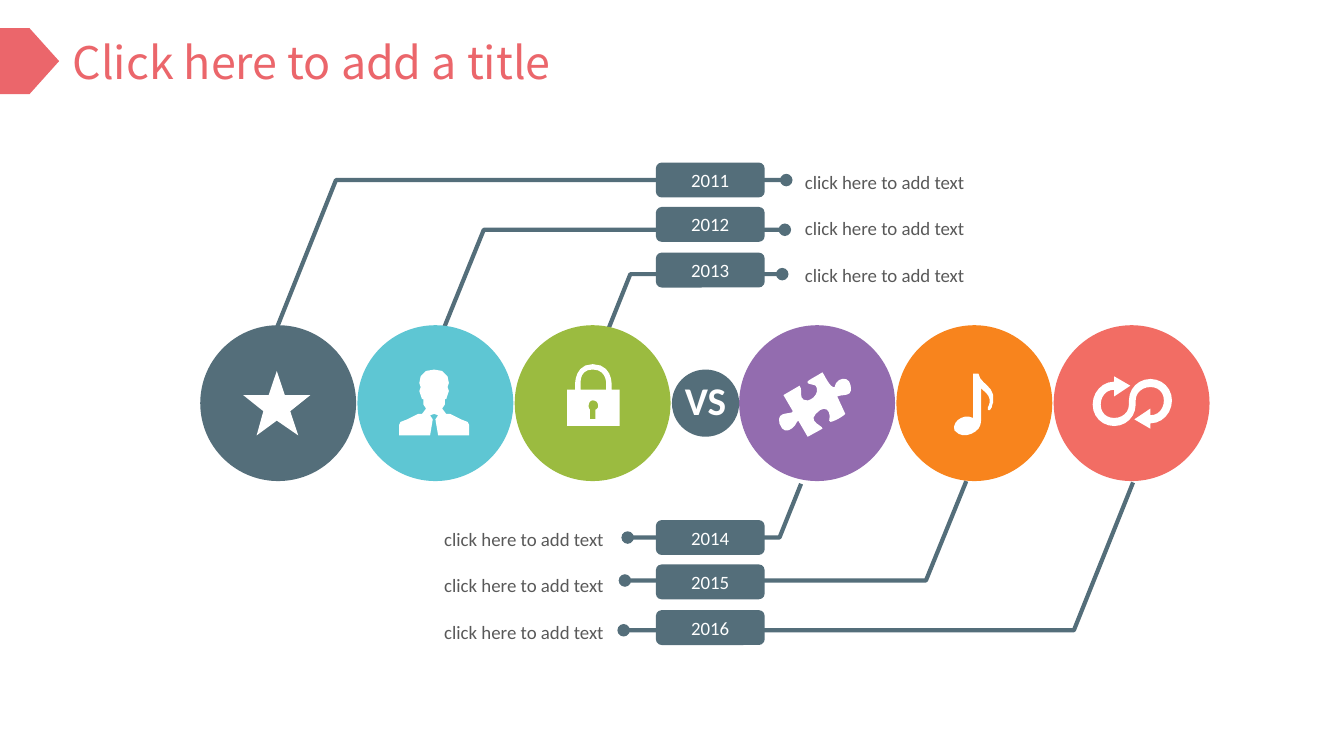
import pptx
import pptx.dml.color
import pptx.enum.shapes
import pptx.enum.text
import pptx.oxml
import pptx.oxml.ns
import pptx.util

RGBColor = pptx.dml.color.RGBColor
SHAPE = pptx.enum.shapes.MSO_SHAPE
ALIGN = pptx.enum.text.PP_ALIGN
ANCHOR = pptx.enum.text.MSO_ANCHOR

PX = 9144  # EMU in one px, 100 px to the inch
SLIDE_WIDTH = 1000
SLIDE_HEIGHT = SLIDE_WIDTH * 9 / 16

CORAL = RGBColor(0xEB, 0x66, 0x6B)
SLATE = RGBColor(0x54, 0x6E, 0x7A)
CYAN = RGBColor(0x5E, 0xC6, 0xD3)
GREEN = RGBColor(0x9B, 0xBB, 0x40)
PURPLE = RGBColor(0x93, 0x6C, 0xAF)
ORANGE = RGBColor(0xF8, 0x84, 0x1D)
RED = RGBColor(0xF2, 0x6D, 0x64)
WHITE = RGBColor(0xFF, 0xFF, 0xFF)
GREY = RGBColor(0x59, 0x59, 0x59)

TITLE_FONT = {"name": "Noto Sans CJK SC", "size": pptx.util.Pt(24)}
YEAR_FONT = {"name": "Calibri", "size": pptx.util.Pt(10.1)}
VERSUS_FONT = {"name": "Calibri", "size": pptx.util.Pt(21), "bold": True}

# Icon outlines, relative to the circle: pairs are corners, sixes are cubic curves
STAR = [[(57, 34), (63, 52), (82, 52), (67, 64), (73, 82), (57, 71),
         (42, 82), (47, 64), (32, 52), (51, 52)]]
PERSON_LEFT = [(57, 33), (51, 34), (47, 38), (46, 43), (47, 46), (46, 49),
               (48, 55), (49, 55), (49, 59), (51, 62), (48, 66), (45, 66),
               (37, 70), (32, 72), (31, 74), (31, 82), (54, 82), (56, 70),
               (54, 67), (57, 66)]
PERSON = [PERSON_LEFT + [(114 - x, y) for x, y in reversed(PERSON_LEFT)]]
LOCK = [
    [(72, 48), (72, 43), (72, 43, 72, 29, 58, 29), (45, 29, 45, 43, 45, 43),
     (45, 48), (39, 48), (39, 75), (78, 75), (78, 48)],
    [(60, 63), (60, 70), (56, 70), (56, 63), (55, 62, 55, 61, 55, 60),
     (55, 58, 56, 56, 58, 56), (61, 56, 62, 58, 62, 60), (62, 61, 62, 62, 60, 63)],
    [(68, 48), (49, 48), (49, 43), (49, 41, 49, 33, 58, 33), (67, 33, 68, 41, 68, 43)],
]
PUZZLE = [[
    (62, 35), (64, 38, 67, 45, 70, 46), (71, 46), (72, 39, 82, 37, 83, 45),
    (85, 54, 77, 51, 73, 53), (79, 66), (77, 68, 72, 71, 68, 72), (67, 71),
    (69, 64, 64, 58, 57, 66), (51, 72, 63, 75, 62, 77), (51, 83), (44, 71),
    (43, 72), (41, 77, 33, 83, 30, 73), (28, 65, 35, 66, 39, 65), (40, 64),
    (33, 52), (45, 45), (48, 48, 43, 56, 51, 56), (56, 55, 60, 49, 57, 45),
    (55, 44, 52, 44, 51, 43), (51, 41, 51, 42, 52, 41), (55, 39, 59, 37, 62, 35)]]
NOTE = [[
    (61, 36), (57, 36), (57, 69), (51, 66, 44, 70, 43, 75), (43, 77, 43, 79, 44, 79),
    (48, 84, 57, 82, 61, 77), (63, 74, 63, 72, 63, 67), (63, 47),
    (65, 49, 68, 51, 69, 54), (70, 56, 69, 60, 68, 61), (68, 63),
    (70, 64, 70, 62, 71, 61), (71, 59, 72, 58, 72, 57), (74, 45, 62, 44, 61, 36)]]
LOOP_HALF = [
    (72, 40), (63, 40, 56, 47, 56, 56), (56, 59), (56, 65, 51, 69, 45, 69),
    (39, 69, 35, 65, 35, 59), (35, 53, 39, 48, 45, 48), (45, 53), (57, 45),
    (45, 38), (45, 42), (36, 42, 29, 50, 29, 59), (29, 68, 36, 75, 45, 75)]
LOOP = [LOOP_HALF + [
    tuple((115 if index % 2 else 117) - value for index, value in enumerate(segment))
    for segment in LOOP_HALF]]

CIRCLES_LEFT = [(SLATE, STAR), (CYAN, PERSON), (GREEN, LOCK)]
CIRCLES_RIGHT = [(PURPLE, PUZZLE), (ORANGE, NOTE), (RED, LOOP)]

# Year, caption and leader line from its circle to the dot
CALLOUTS_TOP = [
    ("2011", "click here to add text", [(206, 244), (250, 134), (585, 134)]),
    ("2012", "click here to add text", [(330, 245), (360, 171), (584, 171)]),
    ("2013", "click here to add text", [(453, 244), (469, 204), (582, 204)]),
]
CALLOUTS_BOTTOM = [
    ("2014", "click here to add text", [(596, 360), (580, 400), (467, 400)]),
    ("2015", "click here to add text", [(719, 358), (689, 432), (465, 432)]),
    ("2016", "click here to add text", [(843, 359), (799, 469), (464, 469)]),
]


def emu(*lengths):
    return [round(length * PX) for length in lengths]


def set_values(target, values):
    for name, value in values.items():
        setattr(target, name, value)


def write_text(shape, text, font, color, align, frame_values):
    frame = shape.text_frame
    set_values(frame, frame_values)
    paragraph = frame.paragraphs[0]
    paragraph.alignment = align
    run = paragraph.add_run()
    run.text = text
    set_values(run.font, font)
    run.font.color.rgb = color
    return paragraph


def paint(shape, color):
    shape.shadow.inherit = False
    shape.fill.solid()
    shape.fill.fore_color.rgb = color
    shape.line.fill.background()


def add_preset(slide, kind, box, color):
    shape = slide.shapes.add_shape(kind, *emu(*box))
    paint(shape, color)
    return shape


def flatten(contour, steps=6):
    """Turn corners and cubic curves into a list of points."""
    points = [contour[0]]
    for segment in contour[1:]:
        if len(segment) == 2:
            points.append(segment)
            continue
        nodes = [points[-1], segment[:2], segment[2:4], segment[4:]]
        for step in range(1, steps + 1):
            t = step / steps
            weights = ((1 - t) ** 3, 3 * t * (1 - t) ** 2, 3 * t * t * (1 - t), t ** 3)
            points.append(tuple(
                sum(weight * node[axis] for weight, node in zip(weights, nodes))
                for axis in (0, 1)))
    return points


def add_outline(slide, left, top, contours, close):
    builder = None
    for contour in contours:
        points = [emu(left + x, top + y) for x, y in flatten(contour)]
        if builder is None:
            builder = slide.shapes.build_freeform(*points[0])
        else:
            builder.move_to(*points[0])
        builder.add_line_segments(points[1:], close=close)
    return builder.convert_to_shape()


def add_leader(slide, points):
    leader = add_outline(slide, 0, 0, [points], close=False)
    leader.shadow.inherit = False
    leader.fill.background()
    leader.line.color.rgb = SLATE
    leader.line.width = pptx.util.Pt(2.25)
    tail = pptx.oxml.parse_xml(
        f'<a:tailEnd {pptx.oxml.ns.nsdecls("a")} type="oval"/>')
    leader.element.spPr.get_or_add_ln().append(tail)


def add_title(slide, left, top, width, height):
    add_preset(slide, SHAPE.PENTAGON, (left, top, 44, height), CORAL)
    title = slide.shapes.title
    box = emu(left + 44, top, width - 44, height)
    set_values(title, dict(zip(("left", "top", "width", "height"), box)))
    write_text(title, "Click here to add a title", TITLE_FONT, CORAL, ALIGN.LEFT, {
        "word_wrap": False, "vertical_anchor": ANCHOR.MIDDLE,
        "auto_size": pptx.enum.text.MSO_AUTO_SIZE.NONE})


def add_circles(slide, left, top, circles):
    for index, (color, icon) in enumerate(circles):
        x = left + 117 * index
        add_preset(slide, SHAPE.OVAL, (x, top, 116, 116), color)
        paint(add_outline(slide, x, top, icon, close=True), WHITE)


def add_callouts(slide, top, caption_left, align, callouts):
    for index, (year, caption, _) in enumerate(callouts):
        badge_top = top + round(33.4 * index)
        badge = add_preset(
            slide, SHAPE.ROUNDED_RECTANGLE, (488, badge_top, 81, 26), SLATE)
        write_text(badge, year, YEAR_FONT, WHITE, ALIGN.CENTER,
                   {"vertical_anchor": ANCHOR.MIDDLE})
        caption_top = top - 4 + round(34.5 * index)
        box = slide.shapes.add_textbox(*emu(caption_left, caption_top, 289, 31))
        paragraph = write_text(box, caption, YEAR_FONT, GREY, align, {"word_wrap": True})
        paragraph.line_spacing = 1.3


def add_versus(slide, left, top, size):
    badge = add_preset(slide, SHAPE.OVAL, (left, top, size, size), SLATE)
    paragraph = write_text(badge, "VS", VERSUS_FONT, WHITE, ALIGN.CENTER, {
        "word_wrap": False, "vertical_anchor": ANCHOR.MIDDLE, "margin_left": 0,
        "margin_right": 0, "margin_top": 0, "margin_bottom": 0})
    paragraph.line_spacing = 0.9


def main():
    presentation = pptx.Presentation()
    presentation.slide_width, presentation.slide_height = emu(SLIDE_WIDTH, SLIDE_HEIGHT)
    slide = presentation.slides.add_slide(presentation.slide_layouts[5])
    add_title(slide, 0, 21, 437, 49)
    # Leader lines go behind circles and badges
    for _, _, points in CALLOUTS_TOP + CALLOUTS_BOTTOM:
        add_leader(slide, points)
    add_circles(slide, 149, 242, CIRCLES_LEFT)
    add_circles(slide, 550, 242, CIRCLES_RIGHT)
    add_callouts(slide, 121, 589, ALIGN.LEFT, CALLOUTS_TOP)
    add_callouts(slide, 387, 170, ALIGN.RIGHT, CALLOUTS_BOTTOM)
    add_versus(slide, 500, 275, 50)
    presentation.save("out.pptx")


if __name__ == "__main__":
    main()
